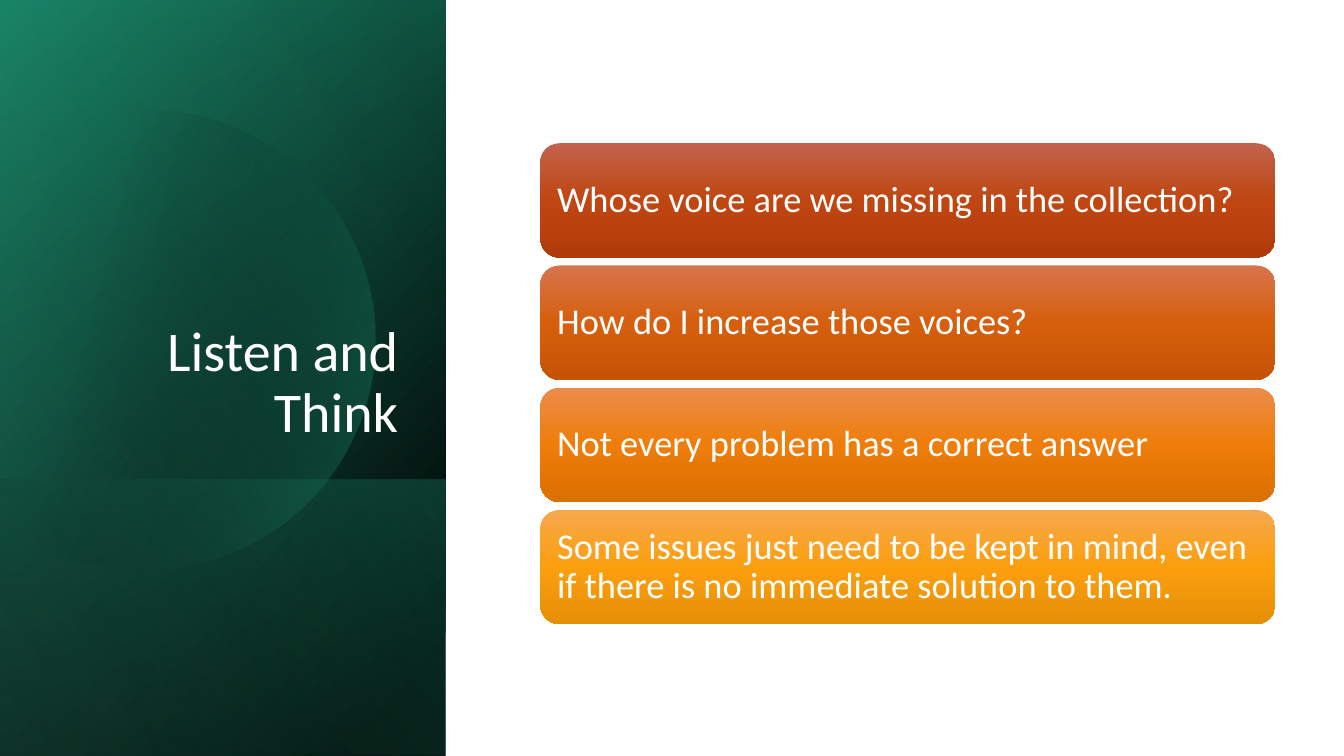
from math import acos, cos, sin

from lxml.etree import SubElement
from pptx import Presentation
from pptx.dml.color import RGBColor
from pptx.enum.shapes import MSO_SHAPE
from pptx.enum.text import MSO_ANCHOR, MSO_AUTO_SIZE, PP_ALIGN
from pptx.oxml.ns import qn
from pptx.util import Cm, Pt

FONT = "Calibri"
WHITE = RGBColor(0xFF, 0xFF, 0xFF)
BLACK = RGBColor(0x00, 0x00, 0x00)
DEEP_GREEN = RGBColor(0x16, 0x74, 0x5A)
GREEN = RGBColor(0x1D, 0x9A, 0x78)
MINT = RGBColor(0x5A, 0xE0, 0xBB)
RUST = [RGBColor(0xC2, 0x63, 0x4D), RGBColor(0xBF, 0x46, 0x11), RGBColor(0xB1, 0x3B, 0x08)]
BURNT = [RGBColor(0xD7, 0x74, 0x4D), RGBColor(0xD6, 0x5F, 0x0D), RGBColor(0xC6, 0x53, 0x04)]
ORANGE = [RGBColor(0xEC, 0x8C, 0x4C), RGBColor(0xEE, 0x7D, 0x09), RGBColor(0xDB, 0x6F, 0x00)]
AMBER = [RGBColor(0xF5, 0xA8, 0x4E), RGBColor(0xFC, 0x9F, 0x0E), RGBColor(0xE5, 0x8F, 0x07)]

SLIDE_WIDTH, SLIDE_HEIGHT = 33.87, 19.05
PANEL_WIDTH = 11.23
BAND_TOP = 12.09
CARD_LEFT, CARD_TOP, CARD_WIDTH, CARD_HEIGHT, CARD_STEP = 13.62, 3.61, 18.52, 2.88, 3.08
CARDS = [
    ("Whose voice are we missing in the collection?", RUST),
    ("How do I increase those voices?", BURNT),
    ("Not every problem has a correct answer", ORANGE),
    ("Some issues just need to be kept in mind, even if there is no immediate solution to them.", AMBER),
]


def shade(shape, stops, angle):
    """Give a shape a linear gradient of (position, colour, opacity) stops and no outline."""
    shape.shadow.inherit = False
    shape.line.fill.background()
    shape.fill.gradient()
    gradient = shape._element.spPr.find(qn("a:gradFill"))
    stop_list = gradient.find(qn("a:gsLst"))
    for old_stop in list(stop_list):
        stop_list.remove(old_stop)
    for position, colour, opacity in stops:
        stop = SubElement(stop_list, qn("a:gs"), pos=str(position * 1000))
        tint = SubElement(stop, qn("a:srgbClr"), val=str(colour))
        if opacity < 100:
            SubElement(tint, qn("a:alpha"), val=str(opacity * 1000))
    direction = gradient.find(qn("a:lin"))
    direction.set("ang", str(angle * 60000))
    direction.set("scaled", "0")


def add_panel(page, top, stops, angle):
    """Add a quarter-turned, mirrored rectangle from top to the slide's bottom edge."""
    height = SLIDE_HEIGHT - top
    shift = (PANEL_WIDTH - height) / 2
    panel = page.shapes.add_shape(
        MSO_SHAPE.RECTANGLE, Cm(shift), Cm(top - shift), Cm(height), Cm(PANEL_WIDTH))
    panel.rotation = 90
    panel._element.spPr.find(qn("a:xfrm")).set("flipH", "1")
    shade(panel, stops, angle)


def add_disc(page, centre_x, centre_y, radius, stops, angle):
    """Add a disc that is cut off by the slide's left edge."""
    limit = acos(-centre_x / radius)
    steps = 120
    turns = [limit * (2 * step / steps - 1) for step in range(steps + 1)]
    points = [(Cm(centre_x + radius * cos(turn)), Cm(centre_y + radius * sin(turn)))
              for turn in turns]
    builder = page.shapes.build_freeform(*points[0])
    builder.add_line_segments(points[1:], close=True)
    shade(builder.convert_to_shape(), stops, angle)


def write_text(shape, text, size, align=PP_ALIGN.LEFT, anchor=MSO_ANCHOR.MIDDLE, inset=None):
    """Fill a shape with one white paragraph."""
    frame = shape.text_frame
    frame.word_wrap = True
    frame.auto_size = MSO_AUTO_SIZE.NONE
    frame.vertical_anchor = anchor
    if inset is not None:
        frame.margin_left = frame.margin_right = Cm(inset)
        frame.margin_top = frame.margin_bottom = Cm(inset)
    para = frame.paragraphs[0]
    para.alignment = align
    para.line_spacing = 0.9
    span = para.add_run()
    span.text = text
    span.font.name = FONT
    span.font.size = Pt(size)
    span.font.color.rgb = WHITE


def add_card(page, top, text, colours):
    """Add a rounded card with its statement."""
    card = page.shapes.add_shape(
        MSO_SHAPE.ROUNDED_RECTANGLE, Cm(CARD_LEFT), Cm(top), Cm(CARD_WIDTH), Cm(CARD_HEIGHT))
    shade(card, [(50 * index, colour, 100) for index, colour in enumerate(colours)], 90)
    write_text(card, text, 26, inset=0.28)


def place_title(page, text):
    """Move the title placeholder onto the green panel, in front of it."""
    title = page.shapes.title
    title.left, title.top, title.width, title.height = Cm(1.63), Cm(4.67), Cm(8.66), Cm(6.65)
    write_text(title, text, 40, align=PP_ALIGN.RIGHT, anchor=MSO_ANCHOR.BOTTOM)
    page.shapes._spTree.append(title._element)


def main():
    """Build the slide and save it."""
    deck = Presentation()
    deck.slide_width, deck.slide_height = Cm(SLIDE_WIDTH), Cm(SLIDE_HEIGHT)
    page = deck.slides.add_slide(deck.slide_layouts[5])
    add_panel(page, 0, [(8, BLACK, 100), (100, DEEP_GREEN, 100)], 50)
    add_panel(page, 0, [(0, BLACK, 0), (99, GREEN, 46)], 30)
    add_panel(page, BAND_TOP, [(2, GREEN, 29), (100, BLACK, 30)], 130)
    add_disc(page, 3.66, 8.56, 5.8, [(29, BLACK, 0), (100, GREEN, 43)], 14)
    add_panel(page, 0, [(0, BLACK, 0), (99, MINT, 11)], 120)
    place_title(page, "Listen and Think")
    for index, (text, colours) in enumerate(CARDS):
        add_card(page, CARD_TOP + index * CARD_STEP, text, colours)
    deck.save("out.pptx")


if __name__ == "__main__":
    main()
